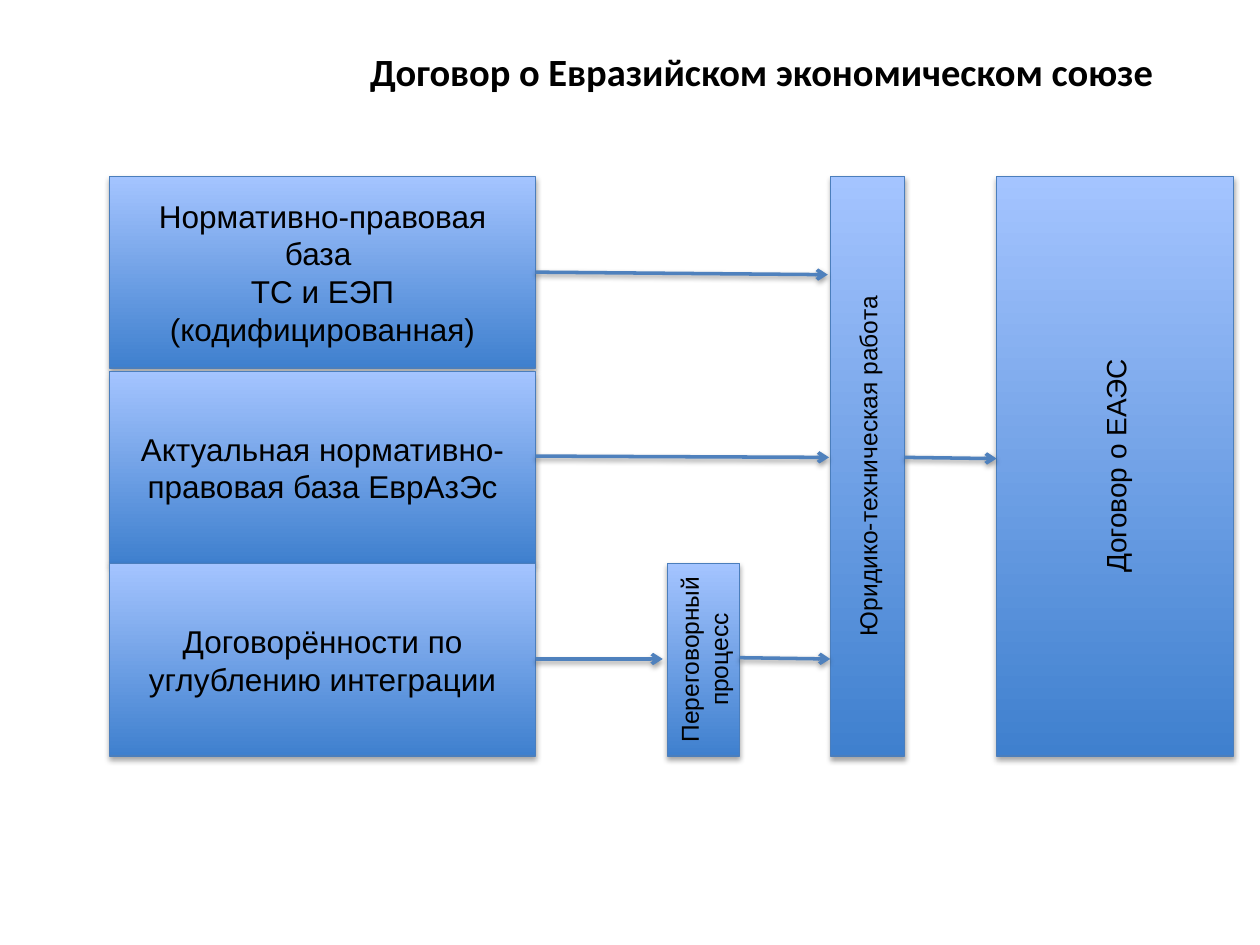
"""Build the slide showing how the Eurasian Economic Union treaty comes together."""
import lxml.etree
import pptx
import pptx.dml.color
import pptx.enum.shapes
import pptx.enum.text
import pptx.oxml.ns
import pptx.util


def color(hex_string):
    return pptx.dml.color.RGBColor.from_string(hex_string)


def add_shadow(shape, distance, opacity):
    qn = pptx.oxml.ns.qn
    effects = lxml.etree.SubElement(shape.element.spPr, qn("a:effectLst"))
    shadow = lxml.etree.SubElement(
        effects, qn("a:outerShdw"), blurRad=str(pptx.util.Pt(3.1)),
        dist=str(pptx.util.Pt(distance)), dir="5400000", rotWithShape="0")
    black = lxml.etree.SubElement(shadow, qn("a:srgbClr"), val="000000")
    lxml.etree.SubElement(black, qn("a:alpha"), val=str(opacity * 1000))


inch = pptx.util.Inches
center = pptx.enum.text.PP_ALIGN.CENTER
middle = pptx.enum.text.MSO_ANCHOR.MIDDLE

presentation = pptx.Presentation()
presentation.slide_width, presentation.slide_height = inch(10), inch(7.5)
slide = presentation.slides.add_slide(presentation.slide_layouts[5])

title = slide.shapes.title
title.left, title.top, title.width, title.height = map(inch, (2.19, 0.33, 7.71, 0.47))
title.text_frame.word_wrap = True
title.text_frame.auto_size = pptx.enum.text.MSO_AUTO_SIZE.SHAPE_TO_FIT_TEXT
paragraph = title.text_frame.paragraphs[0]
paragraph.alignment = center
run = paragraph.add_run()
run.text = "Договор о Евразийском экономическом союзе"
run.font.name, run.font.size, run.font.bold = "Calibri", pptx.util.Pt(22), True
run.font.color.rgb = color("000000")

columns = {"sources": (0.87, 3.38), "talks": (5.3, 0.57), "drafting": (6.59, 0.59), "treaty": (7.91, 1.88)}
rows = {"first": (1.4, 1.52), "second": (2.95, 1.52), "third": (4.47, 1.53), "all": (1.4, 4.6)}
boxes = [
    ("sources", "first", 18, ["Нормативно-правовая база ", "ТС и ЕЭП (кодифицированная)"]),
    ("sources", "second", 18, ["Актуальная нормативно-правовая база ЕврАзЭс"]),
    ("sources", "third", 18, ["Договорённости по углублению интеграции"]),
    ("talks", "third", 14, ["Переговорный процесс"]),
    ("drafting", "all", 14, ["Юридико-техническая работа"]),
    ("treaty", "all", 16, ["Договор о ЕАЭС"]),
]
for column, row, size, lines in boxes:
    (left, width), (top, height) = columns[column], rows[row]
    shape = slide.shapes.add_shape(
        pptx.enum.shapes.MSO_SHAPE.RECTANGLE, inch(left), inch(top), inch(width), inch(height))
    shape.fill.gradient()
    shape.fill.gradient_angle = 90
    for stop, position, shade in zip(shape.fill.gradient_stops, (0, 1), ("3F80CE", "A4C4FF")):
        stop.position, stop.color.rgb = position, color(shade)
    shape.line.color.rgb = color("4B7EBC")
    shape.line.width = pptx.util.Pt(0.75)
    add_shadow(shape, 1.8, 35)
    frame = shape.text_frame
    frame.word_wrap, frame.vertical_anchor = True, middle
    if column != "sources":
        shape.element.txBody.bodyPr.set("vert", "vert270")
    for index, line in enumerate(lines):
        paragraph = frame.add_paragraph() if index else frame.paragraphs[0]
        paragraph.alignment = center
        run = paragraph.add_run()
        run.text = line
        run.font.name, run.font.size = "Arial", pptx.util.Pt(size)
        run.font.color.rgb = color("000000")

right = {name: left + width for name, (left, width) in columns.items()}
arrows = [
    (right["sources"], 2.16, 6.57, 2.18),
    (right["sources"], 3.62, 6.58, 3.63),
    (right["sources"], 5.23, 5.26, 5.23),
    (right["talks"], 5.22, columns["drafting"][0], 5.23),
    (right["drafting"], 3.63, columns["treaty"][0], 3.64),
]
for ends in arrows:
    arrow = slide.shapes.add_connector(pptx.enum.shapes.MSO_CONNECTOR.STRAIGHT, *map(inch, ends))
    arrow.line.color.rgb = color("4F81BD")
    arrow.line.width = pptx.util.Pt(2)
    lxml.etree.SubElement(arrow.line._get_or_add_ln(), pptx.oxml.ns.qn("a:tailEnd"), type="arrow")
    add_shadow(arrow, 1.6, 38)

presentation.save("out.pptx")
